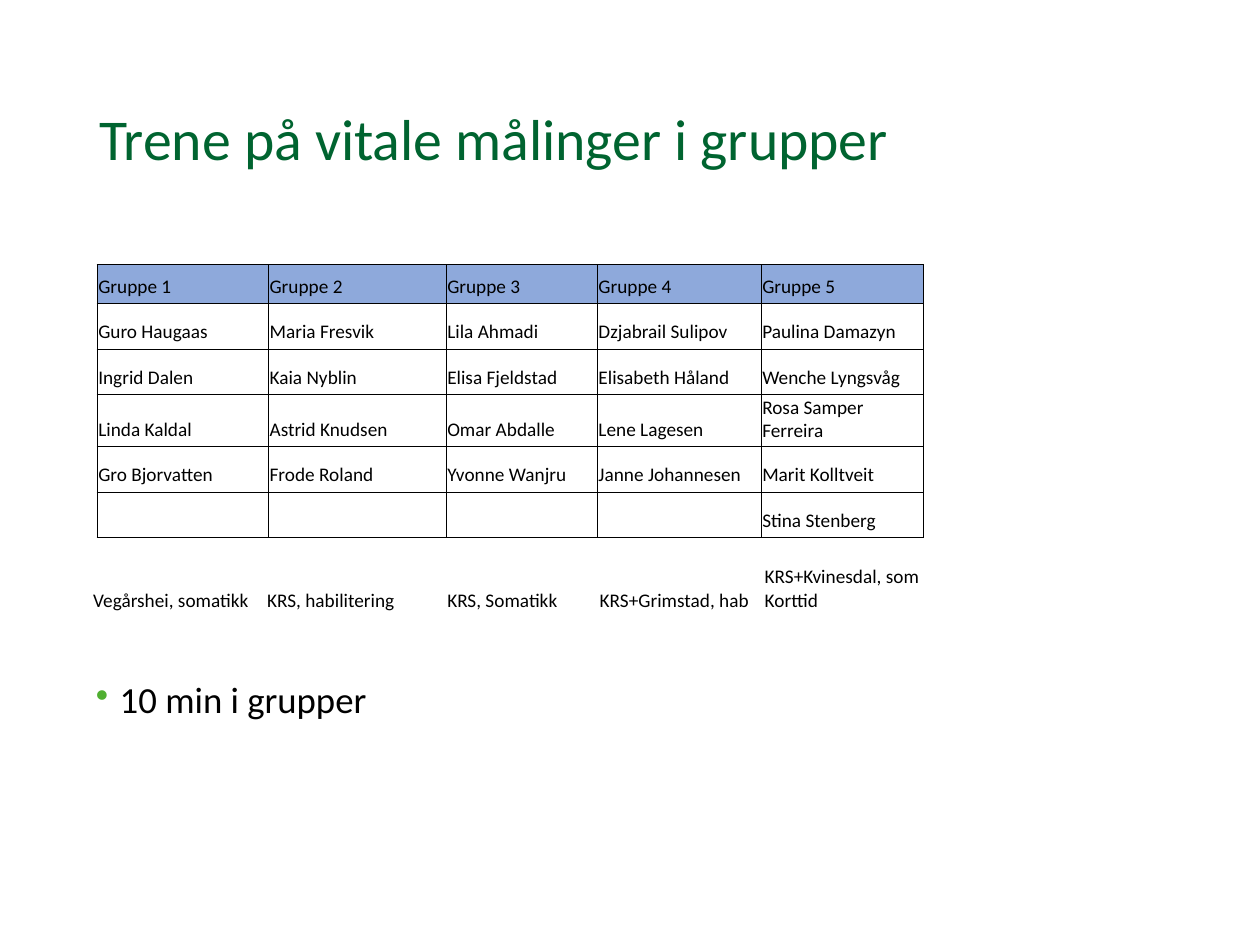
from lxml.etree import SubElement
from pptx import Presentation
from pptx.dml.color import RGBColor
from pptx.enum.text import MSO_ANCHOR
from pptx.oxml.ns import qn
from pptx.util import Inches, Pt

TITLE = "Trene på vitale målinger i grupper"
TASK = "10 min i grupper"
GROUPS = [
    ("Gruppe 1", "Gruppe 2", "Gruppe 3", "Gruppe 4", "Gruppe 5"),
    ("Guro Haugaas", "Maria Fresvik", "Lila Ahmadi", "Dzjabrail Sulipov", "Paulina Damazyn"),
    ("Ingrid Dalen", "Kaia Nyblin", "Elisa Fjeldstad", "Elisabeth Håland", "Wenche Lyngsvåg"),
    ("Linda Kaldal", "Astrid Knudsen", "Omar Abdalle", "Lene Lagesen", "Rosa Samper Ferreira"),
    ("Gro Bjorvatten", "Frode Roland", "Yvonne Wanjru", "Janne Johannesen", "Marit Kolltveit"),
    ("", "", "", "", "Stina Stenberg"),
]
WORKPLACES = [
    ("Vegårshei, somatikk", "KRS, habilitering", "KRS, Somatikk",
     "KRS+Grimstad, hab", "KRS+Kvinesdal, som\nKorttid", ""),
]
GROUP_COLUMNS = [1.36, 1.41, 1.2, 1.3, 1.29]
GROUP_ROWS = [0.31] + [0.36] * 5
WORKPLACE_COLUMNS = [1.38, 1.43, 1.21, 1.31, 1.3, 1.3]
WORKPLACE_ROWS = [0.52]
MARGIN, CONTENT_WIDTH = 0.69, 8.62
BLACK, GREEN, BULLET_GREEN, HEADER_BLUE = "000000", "006430", "50AF31", "8EA9DB"
CELL_FORMAT = {
    "margin_left": Inches(0.01), "margin_right": Inches(0.01),
    "margin_top": Inches(0.01), "margin_bottom": Inches(0.04),
    "vertical_anchor": MSO_ANCHOR.BOTTOM,
}
TASK_INSETS = {
    "margin_left": Inches(0.07), "margin_right": Inches(0.07),
    "margin_top": Inches(0.04), "margin_bottom": Inches(0.04),
}


def rgb(color):
    return RGBColor.from_string(color)


def apply(target, values):
    for name, value in values.items():
        setattr(target, name, value)


def style(font, size, color):
    apply(font, {"name": "Calibri", "size": Pt(size)})
    font.color.rgb = rgb(color)


def add_line(slide, text, top, height, size, color, frame_format):
    box = slide.shapes.add_textbox(*map(Inches, (MARGIN, top, CONTENT_WIDTH, height)))
    apply(box.text_frame, {"word_wrap": True, **frame_format})
    line = box.text_frame.paragraphs[0]
    line.line_spacing = 0.9
    run = line.add_run()
    run.text = text
    style(run.font, size, color)
    return line


def add_bullet(line, color):
    properties = line._p.get_or_add_pPr()
    properties.set("marL", str(Inches(0.19)))
    properties.set("indent", str(Inches(-0.19)))
    SubElement(SubElement(properties, qn("a:buClr")), qn("a:srgbClr"), val=color)
    SubElement(properties, qn("a:buChar"), char="•")


def add_borders(cell):
    properties = cell._tc.get_or_add_tcPr()
    for side in ("lnL", "lnR", "lnT", "lnB"):
        border = SubElement(properties, qn(f"a:{side}"), w=str(Pt(0.5)))
        SubElement(SubElement(border, qn("a:solidFill")), qn("a:srgbClr"), val=BLACK)


def add_grid(slide, content, left, top, widths, heights, header=None, bordered=False):
    frame = slide.shapes.add_table(
        len(heights), len(widths),
        *map(Inches, (left, top, sum(widths), sum(heights))))
    grid = frame.table
    apply(grid, {"first_row": False, "horz_banding": False})
    for column, width in zip(grid.columns, widths):
        column.width = Inches(width)
    for row, height in zip(grid.rows, heights):
        row.height = Inches(height)
    for r, names in enumerate(content):
        for c, name in enumerate(names):
            cell = grid.cell(r, c)
            cell.text = name
            apply(cell, CELL_FORMAT)
            if bordered:
                add_borders(cell)
            if header and r == 0:
                cell.fill.solid()
                cell.fill.fore_color.rgb = rgb(header)
            else:
                cell.fill.background()
            for line in cell.text_frame.paragraphs:
                for font in [line.font] + [run.font for run in line.runs]:
                    style(font, 11, BLACK)


def main():
    deck = Presentation()
    apply(deck, {"slide_width": Inches(10), "slide_height": Inches(7.5)})
    slide = deck.slides.add_slide(deck.slide_layouts[6])
    add_line(slide, TITLE, 0.4, 1.45, 33, GREEN, {"vertical_anchor": MSO_ANCHOR.MIDDLE})
    task = add_line(slide, TASK, 5.37, 1.39, 21, BLACK, TASK_INSETS)
    add_bullet(task, BULLET_GREEN)
    add_grid(slide, GROUPS, 0.77, 2.1, GROUP_COLUMNS, GROUP_ROWS, HEADER_BLUE, True)
    add_grid(slide, WORKPLACES, 0.73, 4.38, WORKPLACE_COLUMNS, WORKPLACE_ROWS)
    deck.save("out.pptx")


if __name__ == "__main__":
    main()
